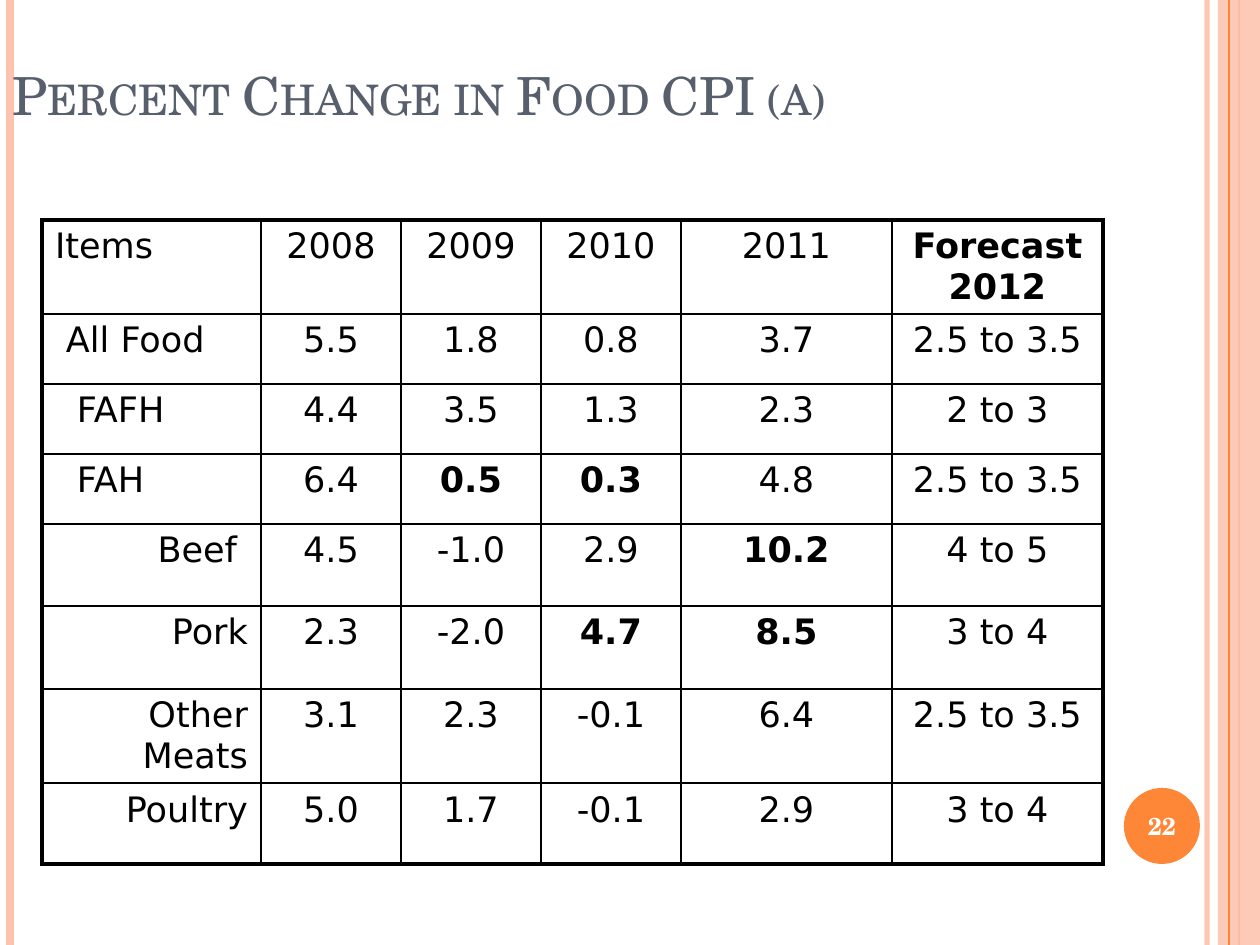
from dataclasses import dataclass

from lxml.etree import SubElement
from pptx import Presentation
from pptx.dml.color import RGBColor
from pptx.enum.shapes import MSO_CONNECTOR as Connector, MSO_SHAPE as Shape
from pptx.enum.text import MSO_ANCHOR as Anchor, PP_ALIGN as Align
from pptx.oxml.ns import qn
from pptx.util import Emu, Pt

PX_PER_INCH = 126
PAGE_WIDTH, PAGE_HEIGHT = 1260, 945


@dataclass(frozen=True)
class Theme:
    heading_font: str = "TeX Gyre Schola"
    body_font: str = "DejaVu Sans"
    title_color: str = "575F6D"
    accent: str = "FE8637"
    accent_light: str = "FEC3AE"
    ink: str = "000000"
    paper: str = "FFFFFF"
    title_size: int = 30
    table_size: int = 20
    number_size: int = 14
    inner_border: float = 1
    outer_border: float = 2.25


THEME = Theme()

COLUMN_WIDTHS = [219, 140, 140, 140, 211, 211]
ROW_HEIGHTS = [92, 70, 70, 70, 82, 83, 82, 81]
SPACE_WIDTH = 11
CELL_MARGIN = 13

ROWS = [
    ["Items", "2008", "2009", "2010", "2011", "Forecast 2012"],
    ["All Food", "5.5", "1.8", "0.8", "3.7", "2.5 to 3.5"],
    ["FAFH", "4.4", "3.5", "1.3", "2.3", "2 to 3"],
    ["FAH", "6.4", "0.5", "0.3", "4.8", "2.5 to 3.5"],
    ["Beef", "4.5", "-1.0", "2.9", "10.2", "4 to 5"],
    ["Pork", "2.3", "-2.0", "4.7", "8.5", "3 to 4"],
    ["Other Meats", "3.1", "2.3", "-0.1", "6.4", "2.5 to 3.5"],
    ["Poultry", "5.0", "1.7", "-0.1", "2.9", "3 to 4"],
]
BOLD_CELLS = {(0, 5), (3, 2), (3, 3), (4, 4), (5, 3), (5, 4)}
LEFT_INDENTS = {1: 1, 2: 2, 3: 2}
RIGHT_INDENTS = {4: 1}
FIRST_MEAT_ROW = 4


def px(length):
    return Emu(round(length * 914400 / PX_PER_INCH))


def color(value):
    return RGBColor.from_string(value)


def format_runs(frame, font, size, ink, bold=False):
    for para in frame.paragraphs:
        for span in para.runs:
            span.font.name = font
            span.font.size = Pt(size)
            span.font.color.rgb = color(ink)
            span.font.bold = bold


def set_opacity(shape, percent):
    swatch = next(shape._element.spPr.iter(qn("a:srgbClr")))
    SubElement(swatch, qn("a:alpha"), val=str(percent * 1000))


def add_rule(page, x, ink, width):
    rule = page.shapes.add_connector(
        Connector.STRAIGHT, px(x), 0, px(x), px(PAGE_HEIGHT))
    rule.line.color.rgb = color(ink)
    rule.line.width = Pt(width)
    SubElement(rule._element.spPr, qn("a:effectLst"))
    return rule


def add_plain_shape(page, kind, box, ink):
    shape = page.shapes.add_shape(kind, *map(px, box))
    shape.shadow.inherit = False
    shape.fill.solid()
    shape.fill.fore_color.rgb = color(ink)
    shape.line.fill.background()
    return shape


def add_side_bands(page, box):
    """Vertical rules and the band along the page edges."""
    left, top, width, height = box
    right = left + width
    set_opacity(add_rule(page, right - 53, THEME.accent_light, 3), 93)
    add_rule(page, left + 10, THEME.accent_light, 4.5)
    add_rule(page, right - 21, THEME.accent, 1.5)
    band = add_plain_shape(
        page, Shape.RECTANGLE, (right - 42, top, 42, height), THEME.accent_light)
    set_opacity(band, 87)
    add_rule(page, right - 31, THEME.accent, 0.75)


def add_title(page, box):
    title = page.shapes.title
    title.left, title.top, title.width, title.height = map(px, box)
    frame = title.text_frame
    frame.text = "Percent Change in Food CPI (a)"
    frame.vertical_anchor = Anchor.BOTTOM
    frame.paragraphs[0].alignment = Align.LEFT
    format_runs(frame, THEME.heading_font, THEME.title_size, THEME.title_color)
    frame.paragraphs[0].runs[0].font._element.set("cap", "small")
    # Keep the title in front of the side rules
    page.shapes._spTree.append(title._element)


def set_borders(cell, widths):
    properties = cell._tc.get_or_add_tcPr()
    for side, width in widths.items():
        line = SubElement(properties, qn(f"a:ln{side}"), w=str(Pt(width)))
        fill = SubElement(line, qn("a:solidFill"))
        SubElement(fill, qn("a:srgbClr"), val=THEME.ink)


def fill_cell(cell, row, column, text):
    frame = cell.text_frame
    frame.text = text
    para = frame.paragraphs[0]
    cell.margin_left = cell.margin_right = px(CELL_MARGIN)
    if column:
        para.alignment = Align.CENTER
    else:
        para.alignment = Align.RIGHT if row >= FIRST_MEAT_ROW else Align.LEFT
        cell.margin_left = px(CELL_MARGIN + SPACE_WIDTH * LEFT_INDENTS.get(row, 0))
        cell.margin_right = px(CELL_MARGIN + SPACE_WIDTH * RIGHT_INDENTS.get(row, 0))
    format_runs(frame, THEME.body_font, THEME.table_size, THEME.ink,
                (row, column) in BOLD_CELLS)

    on_edge = {
        "L": column == 0,
        "R": column == len(COLUMN_WIDTHS) - 1,
        "T": row == 0,
        "B": row == len(ROWS) - 1,
    }
    set_borders(cell, {
        side: THEME.outer_border if outer else THEME.inner_border
        for side, outer in on_edge.items()})
    cell.fill.background()


def add_price_table(page, left, top):
    box = (left, top, sum(COLUMN_WIDTHS), sum(ROW_HEIGHTS))
    table = page.shapes.add_table(
        len(ROWS), len(COLUMN_WIDTHS), *map(px, box)).table
    table.first_row = table.horz_banding = False
    for column, width in zip(table.columns, COLUMN_WIDTHS):
        column.width = px(width)
    for row, height in zip(table.rows, ROW_HEIGHTS):
        row.height = px(height)
    for row, values in enumerate(ROWS):
        for column, text in enumerate(values):
            fill_cell(table.cell(row, column), row, column, text)


def add_page_number(page, box):
    left, top, width, height = box
    label = page.shapes.add_textbox(
        px(left - 4), px(top + 2), px(width + 8), px(height - 4))
    frame = label.text_frame
    frame.word_wrap = True
    frame.vertical_anchor = Anchor.MIDDLE
    frame.text = "22"
    frame.paragraphs[0].alignment = Align.CENTER
    format_runs(frame, THEME.heading_font, THEME.number_size, THEME.paper, True)


def main():
    deck = Presentation()
    deck.slide_width, deck.slide_height = px(PAGE_WIDTH), px(PAGE_HEIGHT)
    page = deck.slides.add_slide(deck.slide_layouts[5])
    number_box = (1124, 788, 76, 76)

    add_side_bands(page, (0, 0, PAGE_WIDTH, PAGE_HEIGHT))
    add_plain_shape(page, Shape.OVAL, number_box, THEME.accent)
    add_title(page, (0, 32, 1134, 100))
    add_price_table(page, 42, 220)
    add_page_number(page, number_box)
    deck.save("out.pptx")


if __name__ == "__main__":
    main()
